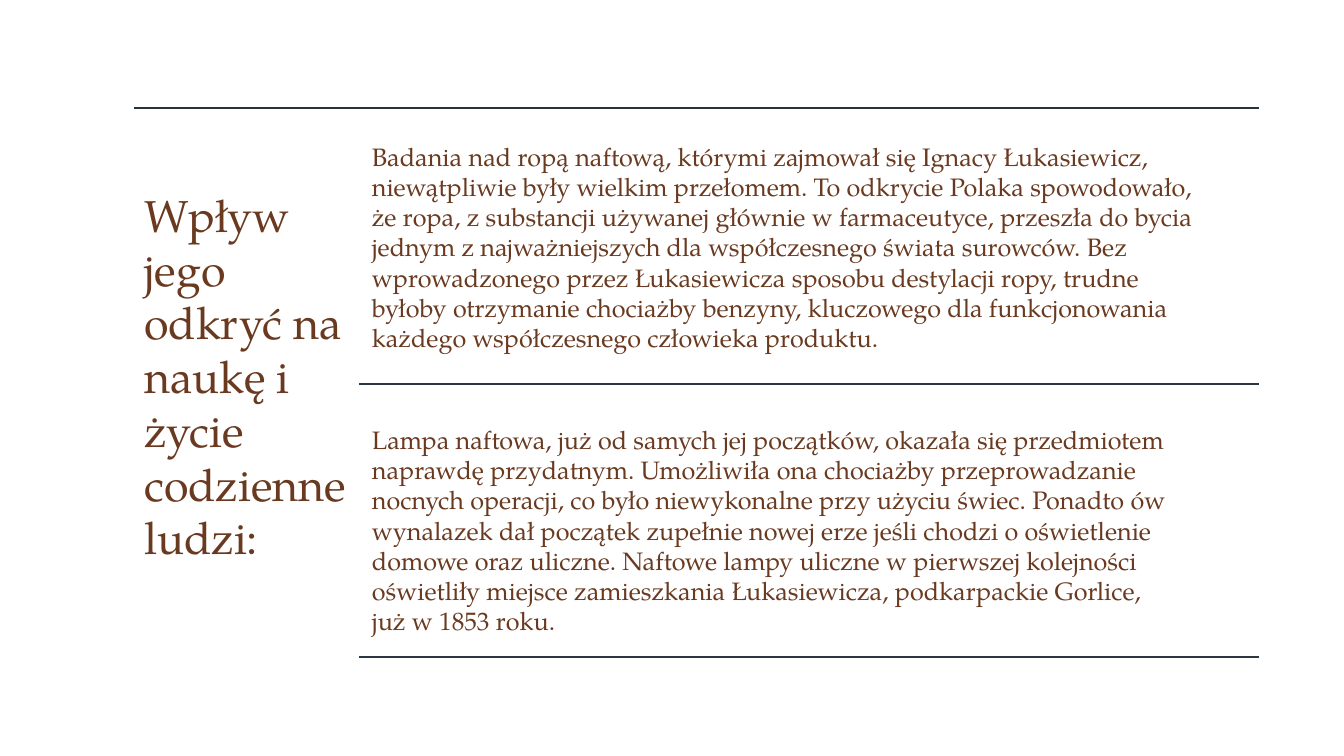
from lxml import etree
from pptx import Presentation
from pptx.dml.color import RGBColor
from pptx.enum import shapes, text
from pptx.oxml import ns
from pptx.util import Inches, Pt

FONT = "TeX Gyre Pagella"
COLORS = {"text": "6A3A20", "top rule": "27323C", "rule": "2B3742"}

TITLE = "Wpływ jego odkryć na naukę i życie codzienne ludzi:"
TITLE_BOX = (1.33, 1.81, 2.26, 3.87)

# text, (left, top, width, height)
SECTIONS = [
    ("Badania nad ropą naftową, którymi zajmował się Ignacy Łukasiewicz, "
     "niewątpliwie były wielkim przełomem. To odkrycie Polaka spowodowało, "
     "że ropa, z substancji używanej głównie w farmaceutyce, przeszła do bycia "
     "jednym z najważniejszych dla współczesnego świata surowców. Bez "
     "wprowadzonego przez Łukasiewicza sposobu destylacji ropy, trudne "
     "byłoby otrzymanie chociażby benzyny, kluczowego dla funkcjonowania "
     "każdego współczesnego człowieka produktu.",
     (3.59, 1.35, 8.5, 2.52)),
    ("Lampa naftowa, już od samych jej początków, okazała się przedmiotem "
     "naprawdę przydatnym. Umożliwiła ona chociażby przeprowadzanie "
     "nocnych operacji, co było niewykonalne przy użyciu świec. Ponadto ów "
     "wynalazek dał początek zupełnie nowej erze jeśli chodzi o oświetlenie "
     "domowe oraz uliczne. Naftowe lampy uliczne w pierwszej kolejności "
     "oświetliły miejsce zamieszkania Łukasiewicza, podkarpackie Gorlice, "
     "już w 1853 roku.",
     (3.59, 4.16, 8.11, 2.22)),
]

# left end, height on the slide, colour
RULES = [(1.33, 1.07, "top rule"), (3.56, 3.81, "rule"), (3.56, 6.52, "rule")]
RULES_RIGHT = 12.49


def add_rule(slide, left, top, color):
    rule = slide.shapes.add_connector(
        shapes.MSO_CONNECTOR.STRAIGHT,
        Inches(left), Inches(top), Inches(RULES_RIGHT), Inches(top))
    rule.line.color.rgb = RGBColor.from_string(COLORS[color])
    rule.line.width = Pt(1)
    etree.SubElement(rule._element.spPr, ns.qn("a:effectLst"))


def write_text(shape, content, size):
    frame = shape.text_frame
    frame.word_wrap = True
    frame.auto_size = text.MSO_AUTO_SIZE.SHAPE_TO_FIT_TEXT
    frame.vertical_anchor = text.MSO_ANCHOR.TOP
    paragraph = frame.paragraphs[0]
    paragraph.alignment = text.PP_ALIGN.LEFT
    run = paragraph.add_run()
    run.text = content
    run.font.name = FONT
    run.font.size = Pt(size)
    run.font.color.rgb = RGBColor.from_string(COLORS["text"])


def main():
    presentation = Presentation()
    presentation.slide_width = Inches(13.33)
    presentation.slide_height = Inches(7.5)
    slide = presentation.slides.add_slide(presentation.slide_layouts[5])

    for rule in RULES:
        add_rule(slide, *rule)

    for content, box in SECTIONS:
        section = slide.shapes.add_textbox(*map(Inches, box))
        write_text(section, content, 18)

    title = slide.shapes.title
    title.left, title.top, title.width, title.height = map(Inches, TITLE_BOX)
    write_text(title, TITLE, 32)

    presentation.save("out.pptx")


if __name__ == "__main__":
    main()
